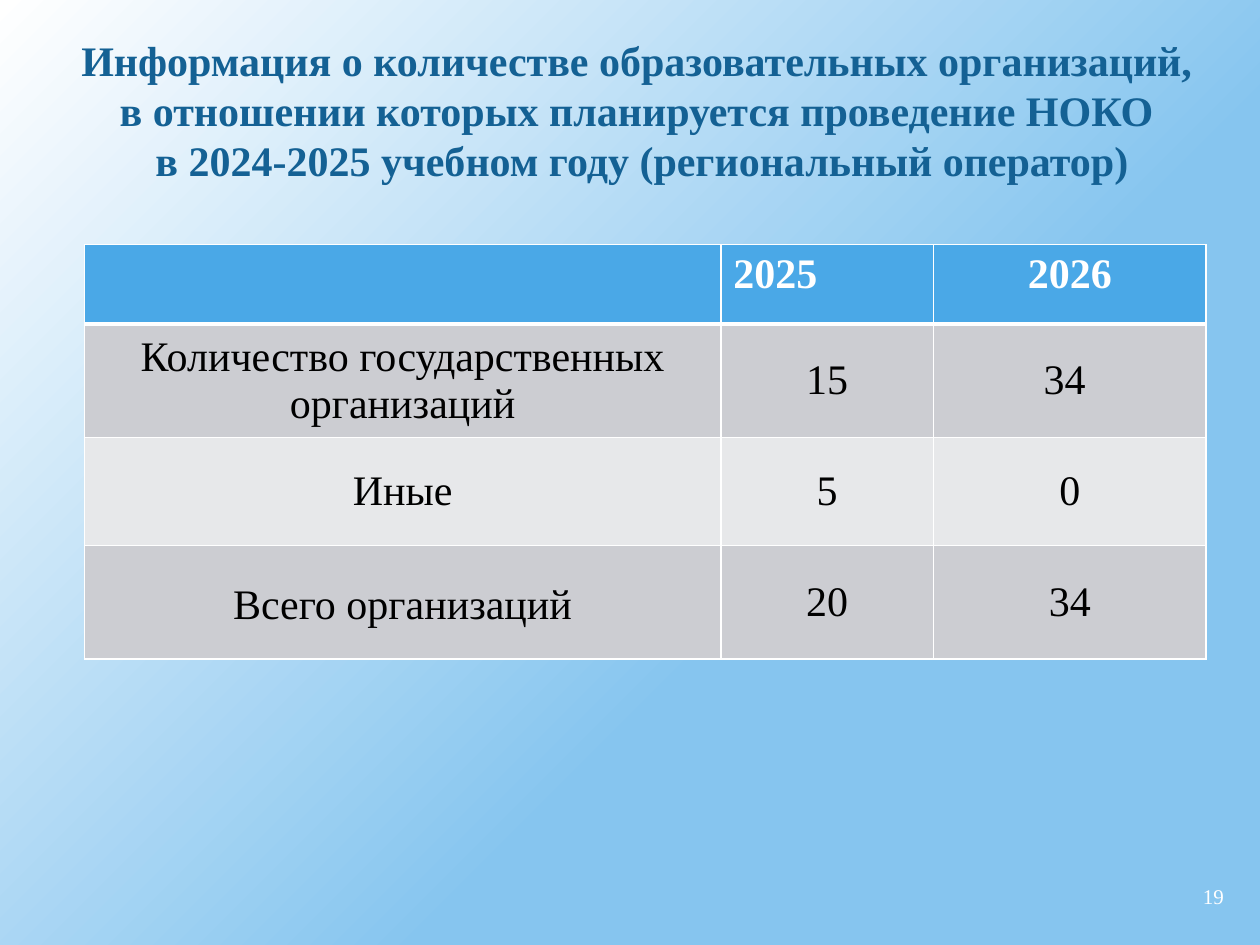
from dataclasses import dataclass

from lxml.etree import SubElement
from pptx import Presentation
from pptx.dml.color import RGBColor as RGB
from pptx.enum.text import MSO_ANCHOR as Anchor, MSO_AUTO_SIZE as AutoSize, PP_ALIGN as Align
from pptx.oxml.ns import qn
from pptx.util import Cm, Pt

TITLE_LINES = [
    "Информация о количестве образовательных организаций, ",
    "в отношении которых планируется проведение НОКО ",
    "в 2024-2025 учебном году (региональный оператор)",
]
TABLE_ROWS = [
    ("", "2025", "2026"),
    ("Количество государственных организаций", "15", "34 "),
    ("Иные", "5", "0"),
    ("Всего организаций", "20", "34"),
]
SLIDE_NUMBER = "19"
COLUMN_WIDTHS = (12.83, 4.29, 5.49)
ROW_HEIGHTS = (1.6, 2.26, 2.18, 2.29)


@dataclass(frozen=True)
class Theme:
    font: str = "Times New Roman"
    main_size: int = 24
    number_size: int = 12
    white: str = "FFFFFF"
    black: str = "000000"
    sky: str = "86C5EF"
    title: str = "146194"
    header: str = "4AA8E7"
    bands: tuple = ("CCCDD2", "E7E8EA")
    thin: int = 1
    thick: int = 3


THEME = Theme()


def place(shape, left, top, width, height):
    shape.left, shape.top = Cm(left), Cm(top)
    shape.width, shape.height = Cm(width), Cm(height)


def add_text(paragraph, text, color, size=THEME.main_size, bold=False):
    run = paragraph.add_run()
    run.text = text
    run.font.name = THEME.font
    run.font.size = Pt(size)
    run.font.bold = bold
    run.font.color.rgb = RGB.from_string(color)


def paint_background(slide):
    fill = slide.background.fill
    fill.gradient()
    fill.gradient_angle = 315
    for stop, position, color in zip(fill.gradient_stops, (0, 0.62), (THEME.white, THEME.sky)):
        stop.position = position
        stop.color.rgb = RGB.from_string(color)


def add_title(slide):
    title = slide.shapes.title
    place(title, 0.89, 0.56, 24.1, 3.33)
    frame = title.text_frame
    frame.word_wrap = True
    frame.auto_size = AutoSize.SHAPE_TO_FIT_TEXT
    frame.vertical_anchor = Anchor.TOP
    paragraph = frame.paragraphs[0]
    paragraph.alignment = Align.CENTER
    for index, line in enumerate(TITLE_LINES):
        if index:
            paragraph.add_line_break()
        add_text(paragraph, line, THEME.title, bold=True)


def set_borders(cell, widths):
    properties = cell._tc.get_or_add_tcPr()
    for index, (side, width) in enumerate(widths.items()):
        line = SubElement(properties, qn(f"a:ln{side}"), w=str(Pt(width)))
        fill = SubElement(line, qn("a:solidFill"))
        SubElement(fill, qn("a:srgbClr"), val=THEME.white)
        properties.insert(index, line)


def format_cell(cell, text, row, column):
    is_header = row == 0
    is_total = row == len(TABLE_ROWS) - 1
    cell.fill.solid()
    color = THEME.header if is_header else THEME.bands[(row - 1) % 2]
    cell.fill.fore_color.rgb = RGB.from_string(color)
    set_borders(cell, {
        "L": THEME.thin,
        "R": THEME.thin,
        "T": THEME.thick if row == 1 else THEME.thin,
        "B": THEME.thick if is_header else THEME.thin,
    })
    cell.vertical_anchor = Anchor.TOP if is_header else Anchor.MIDDLE
    if is_total:
        cell.margin_left = cell.margin_right = Cm(0.18)
        cell.margin_top = cell.margin_bottom = Cm(0)
    paragraph = cell.text_frame.paragraphs[0]
    paragraph.alignment = Align.LEFT if is_header and column == 1 else Align.CENTER
    if is_total and column == 0:
        paragraph.line_spacing = 1.15
    if text:
        add_text(paragraph, text, THEME.white if is_header else THEME.black, bold=is_header)


def add_organizations_table(slide):
    table = slide.shapes.add_table(
        len(ROW_HEIGHTS), len(COLUMN_WIDTHS), Cm(1.7), Cm(4.93),
        Cm(sum(COLUMN_WIDTHS)), Cm(sum(ROW_HEIGHTS)),
    ).table
    for column, width in zip(table.columns, COLUMN_WIDTHS):
        column.width = Cm(width)
    for row, height in zip(table.rows, ROW_HEIGHTS):
        row.height = Cm(height)
    for row, texts in enumerate(TABLE_ROWS):
        for column, text in enumerate(texts):
            format_cell(table.cell(row, column), text, row, column)


def add_slide_number(slide):
    box = slide.shapes.add_textbox(Cm(23.9), Cm(17.73), Cm(1.12), Cm(0.69))
    frame = box.text_frame
    frame.word_wrap = True
    frame.vertical_anchor = Anchor.MIDDLE
    paragraph = frame.paragraphs[0]
    paragraph.alignment = Align.CENTER
    add_text(paragraph, SLIDE_NUMBER, THEME.white, THEME.number_size)


def main():
    presentation = Presentation()
    presentation.slide_width, presentation.slide_height = Cm(25.4), Cm(19.05)
    slide = presentation.slides.add_slide(presentation.slide_layouts[5])
    paint_background(slide)
    add_slide_number(slide)
    add_title(slide)
    add_organizations_table(slide)
    presentation.save("out.pptx")


if __name__ == "__main__":
    main()
